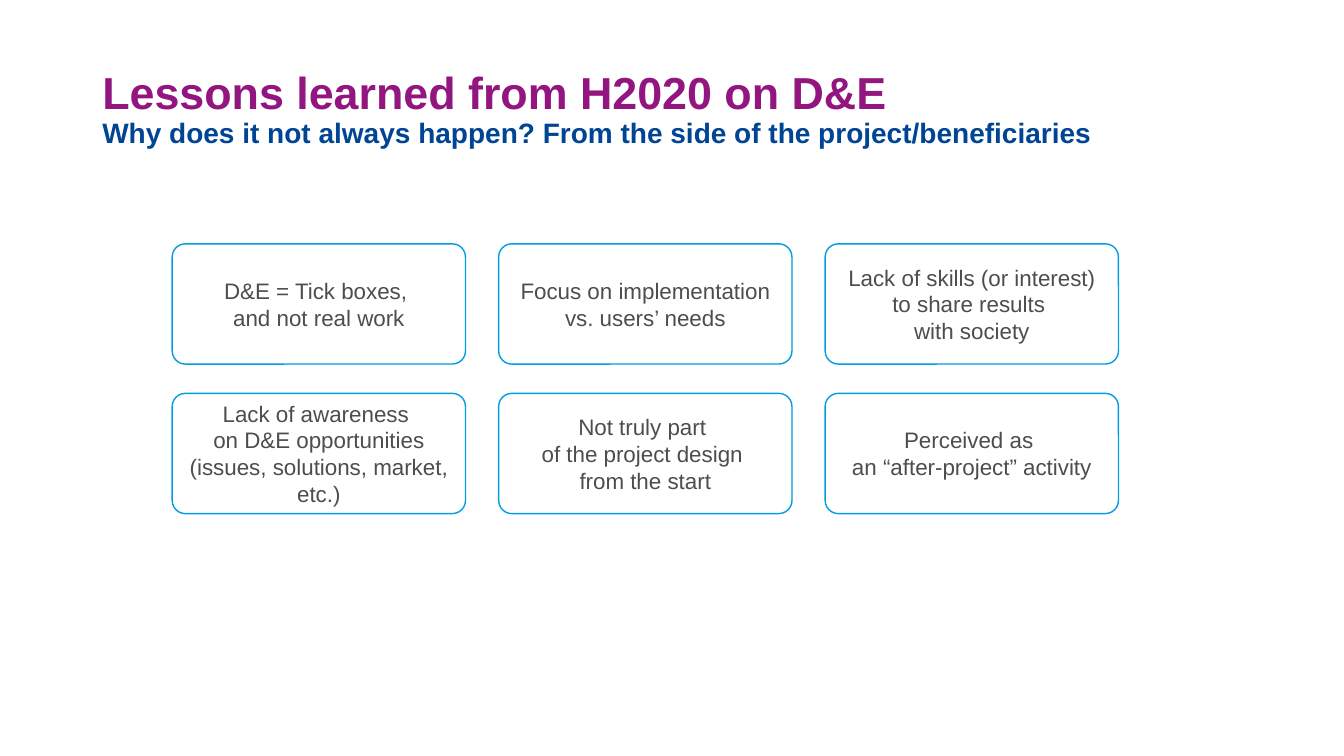
from dataclasses import dataclass

import pptx
import pptx.dml.color
import pptx.enum.shapes
import pptx.enum.text
import pptx.slide
import pptx.util

Pt = pptx.util.Pt

COLOURS = {
    "title": "931680",
    "subtitle": "004494",
    "card_text": "4D4D4D",
    "card_line": "009EE0",
    "card_fill": "FFFFFF",
}
FONT = "Arial"

# Card grid, in points
COLUMNS = 3
GRID_LEFT, GRID_TOP = 123, 174.2
CARD_WIDTH, CARD_HEIGHT = 209.5, 85.9
COLUMN_STEP, ROW_STEP = 233.2, 106.8
CORNER = 0.109


@dataclass
class Card:
    """One reason: a tuple of paragraphs, with line breaks inside them."""
    paragraphs: tuple[str, ...]


@dataclass
class Heading:
    text: str
    size: int
    colour: str


HEADINGS = [
    Heading("Lessons learned from H2020 on D&E", 32, "title"),
    Heading("Why does it not always happen? From the side of the project/beneficiaries",
            20, "subtitle"),
]

CARDS = [
    Card(("D&E = Tick boxes, \nand not real work",)),
    Card(("Focus on implementation", "vs. users’ needs")),
    Card(("Lack of skills (or interest)", "to share results \nwith society")),
    Card(("Lack of awareness \non D&E opportunities (issues, solutions, market, etc.)",)),
    Card(("Not truly part \nof the project design \nfrom the start",)),
    Card(("Perceived as \nan “after-project” activity",)),
]


def colour(name: str) -> pptx.dml.color.RGBColor:
    return pptx.dml.color.RGBColor.from_string(COLOURS[name])


def add_title(slide: pptx.slide.Slide, headings: list[Heading]) -> None:
    box = slide.shapes.add_textbox(Pt(66), Pt(38), Pt(828), Pt(69))
    frame = box.text_frame
    frame.word_wrap = True
    frame.vertical_anchor = pptx.enum.text.MSO_ANCHOR.BOTTOM
    frame.margin_bottom = Pt(0)
    paragraph = frame.paragraphs[0]
    paragraph.line_spacing = 0.9
    paragraph.font.name = FONT
    paragraph.font.bold = True
    for index, heading in enumerate(headings):
        if index:
            paragraph.add_line_break()
        run = paragraph.add_run()
        run.text = heading.text
        run.font.size = Pt(heading.size)
        run.font.color.rgb = colour(heading.colour)


def add_card(slide: pptx.slide.Slide, card: Card, left: float, top: float) -> None:
    shape = slide.shapes.add_shape(
        pptx.enum.shapes.MSO_SHAPE.ROUNDED_RECTANGLE,
        Pt(left), Pt(top), Pt(CARD_WIDTH), Pt(CARD_HEIGHT))
    shape.adjustments[0] = CORNER
    shape.shadow.inherit = False
    shape.fill.solid()
    shape.fill.fore_color.rgb = colour("card_fill")
    shape.line.color.rgb = colour("card_line")
    shape.line.width = Pt(1)

    frame = shape.text_frame
    frame.word_wrap = True
    frame.vertical_anchor = pptx.enum.text.MSO_ANCHOR.MIDDLE
    for index, text in enumerate(card.paragraphs):
        paragraph = frame.add_paragraph() if index else frame.paragraphs[0]
        paragraph.text = text
        paragraph.alignment = pptx.enum.text.PP_ALIGN.CENTER
        paragraph.font.name = FONT
        paragraph.font.size = Pt(16)
        paragraph.font.color.rgb = colour("card_text")


def main() -> None:
    presentation = pptx.Presentation()
    presentation.slide_width = Pt(960)
    presentation.slide_height = Pt(540)
    slide = presentation.slides.add_slide(presentation.slide_layouts[6])

    # Title and subtitle
    add_title(slide, HEADINGS)

    # Reasons, row by row
    for index, card in enumerate(CARDS):
        row, column = divmod(index, COLUMNS)
        add_card(slide, card, GRID_LEFT + column * COLUMN_STEP, GRID_TOP + row * ROW_STEP)

    presentation.save("out.pptx")


if __name__ == "__main__":
    main()
